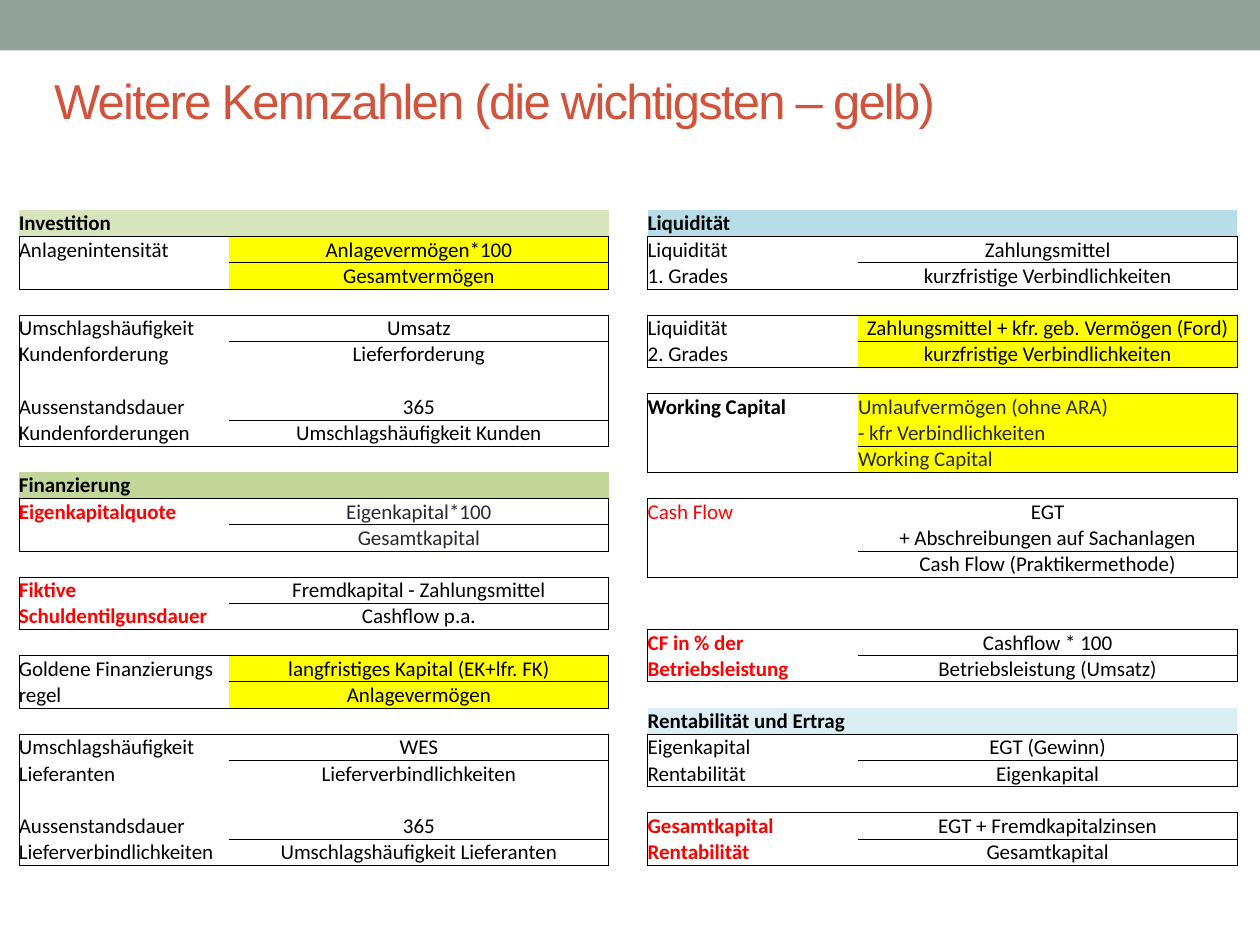
"""Build a slide with two tables of financial ratios."""
from dataclasses import dataclass

from lxml import etree
from pptx import Presentation
from pptx.dml.color import RGBColor
from pptx.enum.shapes import MSO_SHAPE
from pptx.enum.text import MSO_ANCHOR, PP_ALIGN
from pptx.oxml.ns import qn
from pptx.util import Inches, Pt

RECT = MSO_SHAPE.RECTANGLE
LEFT, MID = PP_ALIGN.LEFT, PP_ALIGN.CENTER
LOW, CENTRE = MSO_ANCHOR.BOTTOM, MSO_ANCHOR.MIDDLE


@dataclass(frozen=True)
class Theme:
    band: str = "93A299"
    title: str = "D2533C"
    black: str = "000000"
    ink: str = "292934"
    red: str = "FF0000"
    white: str = "FFFFFF"
    mark: str = "FFFF00"
    head: str = "Arial"
    body: str = "Calibri"
    big: int = 28
    small: int = 12
    rule: float = 0.5


T = Theme()
KEY = {"color": T.red, "bold": True}
TITLE = "Weitere Kennzahlen (die wichtigsten – gelb)"

ASSETS = [
    {"head": "Investition", "tint": "D8E4BC"},
    {"rows": [("Anlagenintensität", "Anlagevermögen*100"), ("", "Gesamtvermögen")],
     "fill": T.mark},
    {"rows": [("Umschlagshäufigkeit", "Umsatz"),
              ("Kundenforderung", "Lieferforderung"),
              ("", ""),
              ("Aussenstandsdauer", "365"),
              ("Kundenforderungen", "Umschlagshäufigkeit Kunden")],
     "bars": (1, 4)},
    {"head": "Finanzierung", "tint": "C4D79B"},
    {"rows": [("Eigenkapitalquote", "Eigenkapital*100"), ("", "Gesamtkapital")],
     "label": KEY, "value": {"color": T.ink}},
    {"rows": [("Fiktive", "Fremdkapital - Zahlungsmittel"),
              ("Schuldentilgunsdauer", "Cashflow p.a.")],
     "label": KEY},
    {"rows": [("Goldene Finanzierungs", "langfristiges Kapital (EK+lfr. FK)"),
              ("regel", "Anlagevermögen")],
     "fill": T.mark},
    {"rows": [("Umschlagshäufigkeit", "WES"),
              ("Lieferanten", "Lieferverbindlichkeiten"),
              ("", ""),
              ("Aussenstandsdauer", "365"),
              ("Lieferverbindlichkeiten", "Umschlagshäufigkeit Lieferanten")],
     "bars": (1, 4)},
]
CASH = [
    {"head": "Liquidität", "tint": "B7DEE8"},
    {"rows": [("Liquidität", "Zahlungsmittel"),
              ("1. Grades", "kurzfristige Verbindlichkeiten")]},
    {"rows": [("Liquidität", "Zahlungsmittel + kfr. geb. Vermögen (Ford)"),
              ("2. Grades", "kurzfristige Verbindlichkeiten")],
     "fill": T.mark},
    {"rows": [("Working Capital", "Umlaufvermögen (ohne ARA)"),
              ("", "- kfr Verbindlichkeiten"),
              ("", "Working Capital")],
     "bars": (2,), "fill": T.mark, "label": {"bold": True},
     "value": {"color": T.ink, "align": LEFT}},
    {"rows": [("Cash Flow", "EGT"),
              ("", "+ Abschreibungen auf Sachanlagen"),
              ("", "Cash Flow (Praktikermethode)")],
     "bars": (2,), "label": {"color": T.red}, "gap": 2},
    {"rows": [("CF in % der", "Cashflow * 100"),
              ("Betriebsleistung", "Betriebsleistung (Umsatz)")],
     "label": KEY},
    {"head": "Rentabilität und Ertrag", "tint": "DAEEF3"},
    {"rows": [("Eigenkapital", "EGT (Gewinn)"), ("Rentabilität", "Eigenkapital")]},
    {"rows": [("Gesamtkapital", "EGT + Fremdkapitalzinsen"),
              ("Rentabilität", "Gesamtkapital")],
     "label": KEY},
]
TABLES = [(0.15, ASSETS), (5.14, CASH)]
TOP, HIGH = 1.67, 5.2
COLS = (0.78, 0.89, 3.01)
ROWS = 25


def write(frame, text, size=T.small, font=T.body, color=T.black,
          bold=False, align=LEFT, track=0):
    para = frame.paragraphs[0]
    para.alignment = align
    if not text:
        para._p.get_or_add_endParaRPr().set("sz", str(size * 100))
        return
    run = para.add_run()
    run.text = text
    run.font.size, run.font.name, run.font.bold = Pt(size), font, bold
    run.font.color.rgb = RGBColor.from_string(color)
    if track:
        run._r.get_or_add_rPr().set("spc", str(track * 100))


def paint(shape, color):
    shape.fill.solid()
    shape.fill.fore_color.rgb = RGBColor.from_string(color)


def plan(blocks):
    """Return the text, fills and ruled edges of the grid."""
    words, fills, edges, row = {}, {}, set(), 0
    last = len(COLS)
    for block in blocks:
        if "head" in block:
            words[row, 0] = block["head"], {"bold": True}
            fills.update({(row, col): block["tint"] for col in range(last)})
            row += 1
            continue
        end = row + len(block["rows"])
        edges |= {("h", y, col) for y in (row, end) for col in range(last)}
        edges |= {("h", row + bar, last - 1) for bar in block.get("bars", (1,))}
        for y, (label, value) in enumerate(block["rows"], row):
            edges |= {("v", y, 0), ("v", y, last)}
            words[y, 0] = label, block.get("label", {})
            words[y, last - 1] = value, {"align": MID, **block.get("value", {})}
            fills[y, last - 1] = block.get("fill", T.white)
        row = end + block.get("gap", 1)
    return words, fills, edges


def border(cell, edges, row, col):
    sides = {"L": ("v", row, col), "R": ("v", row, col + 1),
             "T": ("h", row, col), "B": ("h", row + 1, col)}
    props = cell._tc.get_or_add_tcPr()
    for side, edge in sides.items():
        line = etree.SubElement(props, qn(f"a:ln{side}"), w=str(Pt(T.rule)))
        if edge in edges:
            fill = etree.SubElement(line, qn("a:solidFill"))
            etree.SubElement(fill, qn("a:srgbClr"), val=T.black)
        else:
            etree.SubElement(line, qn("a:noFill"))


def draw(slide, left, blocks):
    words, fills, edges = plan(blocks)
    table = slide.shapes.add_table(
        ROWS, len(COLS), Inches(left), Inches(TOP),
        Inches(sum(COLS)), Inches(HIGH)).table
    table.first_row = table.horz_banding = False
    for col, width in zip(table.columns, COLS):
        col.width = Inches(width)
    for row in range(ROWS):
        table.rows[row].height = Inches(HIGH / ROWS)
        for col in range(len(COLS)):
            cell = table.cell(row, col)
            border(cell, edges, row, col)
            paint(cell, fills.get((row, col), T.white))
            cell.margin_left = cell.margin_right = 0
            cell.margin_top = cell.margin_bottom = 0
            cell.vertical_anchor = LOW
            text, style = words.get((row, col), ("", {}))
            write(cell.text_frame, text, **style)
        if words.get((row, 0), ("",))[0]:
            table.cell(row, 0).merge(table.cell(row, 1))


def main():
    deck = Presentation()
    deck.slide_width, deck.slide_height = Inches(10), Inches(7.5)
    slide = deck.slides.add_slide(deck.slide_layouts[5])
    band = slide.shapes.add_shape(RECT, 0, 0, deck.slide_width, Inches(0.4))
    band.shadow.inherit = False
    band.line.fill.background()
    paint(band, T.band)
    for left, blocks in TABLES:
        draw(slide, left, blocks)
    title = slide.shapes.title
    title.left, title.top = Inches(0.33), Inches(0.25)
    title.width, title.height = Inches(9), Inches(1.08)
    title.text_frame.vertical_anchor = CENTRE
    write(title.text_frame, TITLE, size=T.big, font=T.head,
          color=T.title, track=-1)
    deck.save("out.pptx")


if __name__ == "__main__":
    main()
